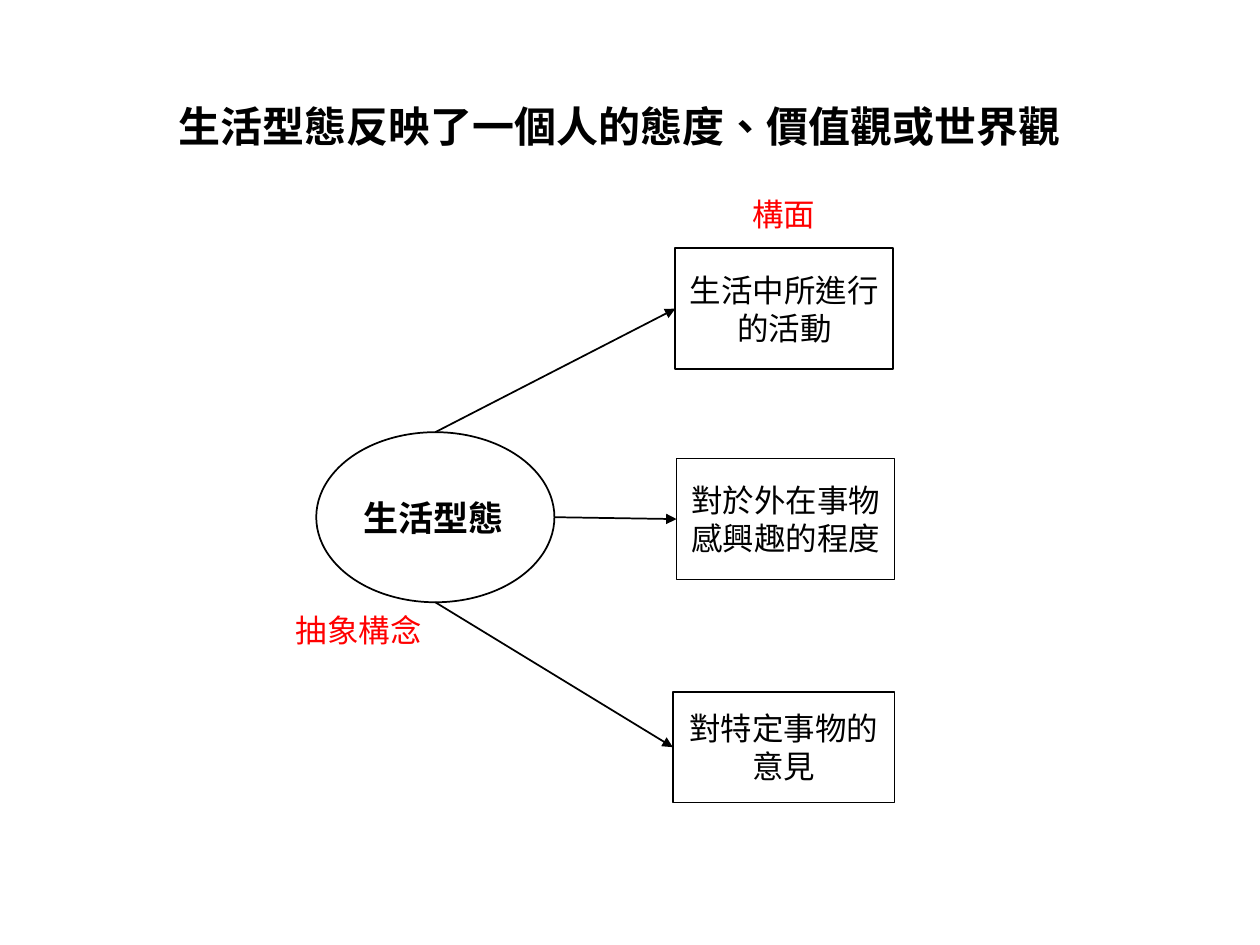
from lxml.etree import SubElement
from pptx import Presentation
from pptx.dml.color import RGBColor
from pptx.enum.lang import MSO_LANGUAGE_ID
from pptx.enum.shapes import MSO_CONNECTOR, MSO_SHAPE
from pptx.enum.text import MSO_ANCHOR, MSO_AUTO_SIZE, PP_ALIGN
from pptx.oxml.ns import qn
from pptx.util import Inches, Pt

BLACK = "000000"
RED = "FF0000"
DIMENSIONS = [
    ("生活中所進行的活動", (5.36, 1.97, 1.73, 0.96)),
    ("對於外在事物感興趣的程度", (5.37, 3.64, 1.73, 0.96)),
    ("對特定事物的意見", (5.34, 5.49, 1.76, 0.88)),
]


def color(value):
    return RGBColor.from_string(value)


def write(shape, text, size, hex_color=BLACK, bold=False, align=PP_ALIGN.LEFT):
    paragraph = shape.text_frame.paragraphs[0]
    paragraph.text = text
    paragraph.alignment = align
    font = paragraph.font
    font.name = "Calibri"
    font.size = Pt(size)
    font.bold = bold
    font.color.rgb = color(hex_color)
    font.language_id = MSO_LANGUAGE_ID.TRADITIONAL_CHINESE


def add_outlined(slide, kind, box, text, size, **style):
    shape = slide.shapes.add_shape(kind, *map(Inches, box))
    shape.shadow.inherit = False
    shape.fill.background()
    shape.line.color.rgb = color(BLACK)
    shape.line.width = Pt(1)
    shape.text_frame.word_wrap = True
    shape.text_frame.vertical_anchor = MSO_ANCHOR.MIDDLE
    write(shape, text, size, **style)
    return shape


def add_label(slide, box, text, size, wrap=False, **style):
    label = slide.shapes.add_textbox(*map(Inches, box))
    label.text_frame.word_wrap = wrap
    label.text_frame.auto_size = MSO_AUTO_SIZE.SHAPE_TO_FIT_TEXT
    write(label, text, size, **style)


def add_arrow(slide, start, end):
    arrow = slide.shapes.add_connector(MSO_CONNECTOR.STRAIGHT, *start, *end)
    arrow.line.color.rgb = color(BLACK)
    arrow.line.width = Pt(1)
    SubElement(arrow.line._get_or_add_ln(), qn("a:tailEnd"), type="triangle")
    SubElement(arrow._element.spPr, qn("a:effectLst"))


def add_concept_map(slide, concept_box):
    """Draw the concept ellipse with an arrow to each dimension box."""
    concept = add_outlined(slide, MSO_SHAPE.OVAL, concept_box, "生活型態", 20, bold=True)
    center = concept.left + concept.width // 2
    bottom = concept.top + concept.height
    starts = [
        (center, concept.top),
        (concept.left + concept.width, concept.top + concept.height // 2),
        (center, bottom),
    ]
    for start, (text, box) in zip(starts, DIMENSIONS):
        dimension = add_outlined(
            slide, MSO_SHAPE.RECTANGLE, box, text, 18, align=PP_ALIGN.CENTER
        )
        add_arrow(slide, start, (dimension.left, dimension.top + dimension.height // 2))


def main():
    presentation = Presentation()
    presentation.slide_width = Inches(10)
    presentation.slide_height = Inches(7.5)
    slide = presentation.slides.add_slide(presentation.slide_layouts[6])
    add_concept_map(slide, (2.51, 3.43, 1.89, 1.35))
    add_label(slide, (1.32, 0.75, 8.68, 0.5), "生活型態反映了一個人的態度、價值觀或世界觀",
              24, wrap=True, bold=True)
    add_label(slide, (2.25, 4.8, 1.21, 0.4), "抽象構念", 18, hex_color=RED)
    add_label(slide, (5.87, 1.5, 0.71, 0.4), "構面", 18, hex_color=RED)
    presentation.save("out.pptx")


if __name__ == "__main__":
    main()
